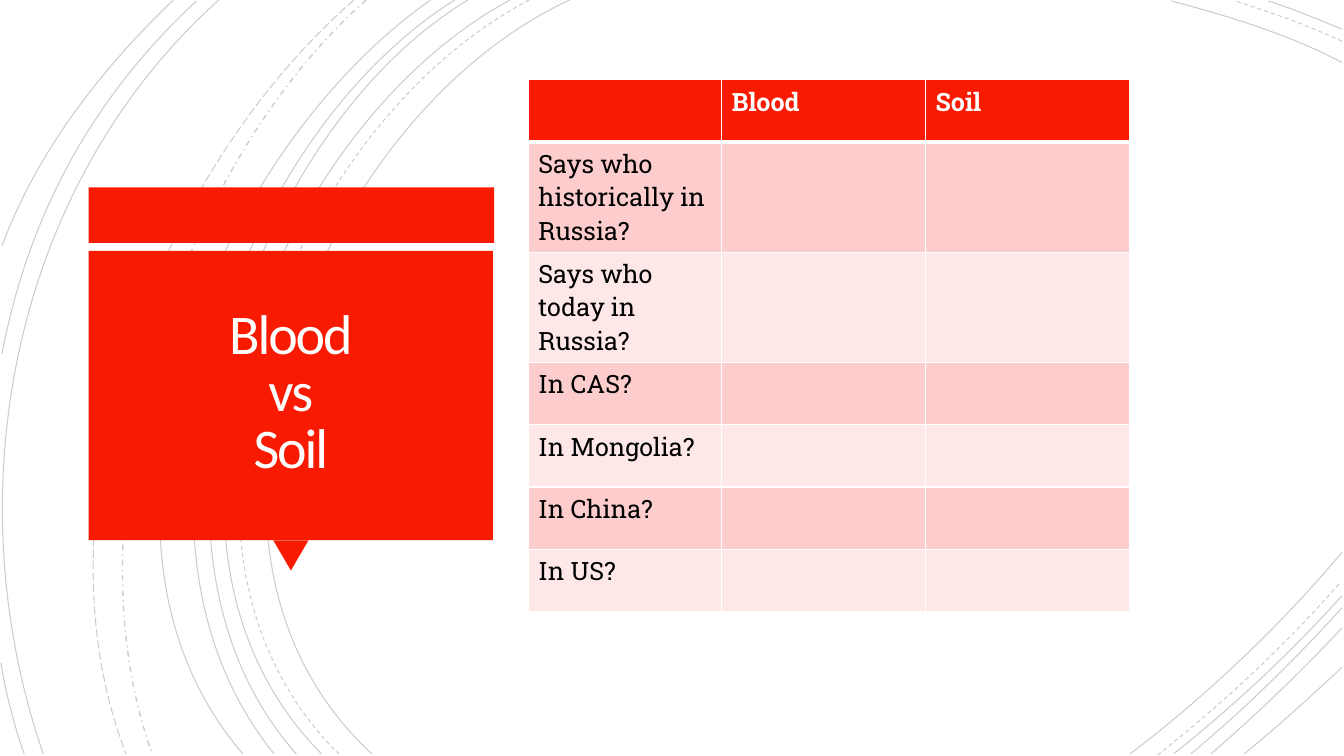
from copy import deepcopy

from lxml.etree import SubElement
from pptx import Presentation
from pptx.dml.color import RGBColor
from pptx.enum.dml import MSO_LINE_DASH_STYLE as Dash
from pptx.enum.shapes import MSO_SHAPE as Shape
from pptx.enum.text import MSO_ANCHOR as Anchor, MSO_AUTO_SIZE as AutoSize, PP_ALIGN as Align
from pptx.oxml.ns import qn
from pptx.util import Inches, Pt

RED = RGBColor(0xF8, 0x1B, 0x02)
DARK_BAND = RGBColor(0xFC, 0xCD, 0xCC)
LIGHT_BAND = RGBColor(0xFE, 0xE8, 0xE7)
BLACK = RGBColor(0, 0, 0)
WHITE = RGBColor(0xFF, 0xFF, 0xFF)
TITLE_WHITE = RGBColor(0xFF, 0xFE, 0xFF)

# Each arc: start, two control points, end
SOLID_ARCS = [
    [(5.65, 0), (3.15, 1.15), (1.43, 5.4), (3.69, 7.48)],
    [(13.31, 0.62), (12.78, 0.34), (12.18, 0.16), (11.62, 0.01)],
    [(11.21, 7.48), (11.97, 6.9), (12.69, 6.22), (13.31, 5.48)],
    [(5.06, 0), (2.7, 1.27), (1.1, 5.37), (3.19, 7.48)],
    [(13.31, 0.29), (13.07, 0.19), (12.83, 0.09), (12.58, 0.01)],
    [(11.64, 7.48), (12.23, 7.01), (12.8, 6.48), (13.31, 5.91)],
    [(4.64, 0), (2.44, 1.33), (1.1, 5.41), (2.94, 7.48)],
    [(11.81, 7.48), (12.34, 7.04), (12.84, 6.55), (13.31, 6.03)],
    [(4.51, 0), (2.31, 1.38), (0.97, 5.33), (2.72, 7.48)],
    [(12.01, 7.48), (12.46, 7.09), (12.9, 6.67), (13.31, 6.23)],
    [(4.27, 0), (2.17, 1.47), (0.53, 5.29), (2.41, 7.48)],
    [(12.34, 7.48), (12.67, 7.21), (12.99, 6.92), (13.31, 6.62)],
    [(2.17, 0), (0.11, 1.85), (-0.46, 4.9), (0.43, 7.48)],
    [(1.95, 0.01), (0.92, 0.96), (0.28, 2.14), (0.02, 3.51)],
    [(0.01, 6.58), (0.06, 6.89), (0.14, 7.19), (0.24, 7.48)],
    [(1.72, 0), (1, 0.69), (0.37, 1.5), (0.02, 2.44)],
]
DASHED_ARCS = [
    [(5.25, 0), (2.85, 1.25), (1.23, 5.37), (3.36, 7.48)],
    [(13.31, 0.41), (12.97, 0.25), (12.6, 0.12), (12.25, 0.01)],
    [(11.48, 7.49), (12.13, 6.98), (12.75, 6.4), (13.3, 5.77)],
]
DASH_DOT_ARCS = [[(3.63, 0), (1.76, 1.66), (0.65, 5.09), (1.51, 7.48)]]
LONG_DASH_ARCS = [[(3.51, 0), (1.57, 1.69), (0.29, 4.99), (1.25, 7.48)]]
ARC_GROUPS = [
    (SOLID_ARCS, Dash.SOLID, 0.75),
    (DASHED_ARCS, Dash.DASH, 0.75),
    (DASH_DOT_ARCS, Dash.DASH_DOT, 1),
    (LONG_DASH_ARCS, Dash.LONG_DASH, 0.75),
]

ROWS = [
    ("", "Blood", "Soil"),
    ("Says who historically in Russia?", "", ""),
    ("Says who today in Russia?", "", ""),
    ("In CAS?", "", ""),
    ("In Mongolia?", "", ""),
    ("In China?", "", ""),
    ("In US?", "", ""),
]
COLUMN_WIDTHS = [1.92, 2.02, 2.02]
ROW_HEIGHT = 0.62


def set_font(font, color, **values):
    font.color.rgb = color
    for name, value in values.items():
        setattr(font, name, value)


def add_arc(shapes, points, dash, width):
    start, *others = [(Inches(x), Inches(y)) for x, y in points]
    builder = shapes.build_freeform(*start)
    builder.add_line_segments(others, close=False)
    arc = builder.convert_to_shape()
    arc.shadow.inherit = False
    arc.fill.background()
    arc.line.color.rgb = BLACK
    arc.line.width = Pt(width)
    arc.line.dash_style = dash
    line_color = arc.element.find(".//" + qn("a:ln")).find(".//" + qn("a:srgbClr"))
    SubElement(line_color, qn("a:alpha"), val="20000")
    # Turn the three segments into one Bezier curve
    outline = arc.element.find(".//" + qn("a:path"))
    curve = SubElement(outline, qn("a:cubicBezTo"))
    for segment in outline.findall(qn("a:lnTo")):
        curve.append(segment[0])
        outline.remove(segment)


prs = Presentation()
prs.slide_width, prs.slide_height = Inches(13.33), Inches(7.5)
slide = prs.slides.add_slide(prs.slide_layouts[5])

# Background arcs
for arcs, dash, width in ARC_GROUPS:
    for points in arcs:
        add_arc(slide.shapes, points, dash, width)

# Red title panel: bar, pointer, main block
for kind, box, rotation in [
    (Shape.RECTANGLE, (0.88, 1.86, 4.02, 0.55), 0),
    (Shape.ISOSCELES_TRIANGLE, (2.71, 5.36, 0.35, 0.3), 180),
    (Shape.RECTANGLE, (0.88, 2.49, 4.01, 2.87), 0),
]:
    panel = slide.shapes.add_shape(kind, *map(Inches, box))
    panel.rotation = rotation
    panel.shadow.inherit = False
    panel.fill.solid()
    panel.fill.fore_color.rgb = RED
    panel.line.fill.background()

# Title, in front of the panel
title = slide.shapes.title
panel.element.addnext(title.element)
title.left, title.top, title.width, title.height = map(Inches, (0.97, 2.57, 3.83, 2.69))
heading = title.text_frame
heading.text = "Blood\vvs\vSoil"
frame_format = {"vertical_anchor": Anchor.MIDDLE, "word_wrap": True, "auto_size": AutoSize.NONE}
frame_format.update({f"margin_{side}": Inches(0.25) for side in ("left", "right", "top", "bottom")})
for name, value in frame_format.items():
    setattr(heading, name, value)
lines = heading.paragraphs[0]
lines.alignment = Align.CENTER
lines.line_spacing = 0.85
for run in lines.runs:
    set_font(run.font, TITLE_WHITE, name="Calibri", size=Pt(40))
    run.font._element.set("spc", "-150")
for line_break in lines._p.findall(qn("a:br")):
    line_break.append(deepcopy(run.font._element))

# Comparison table
frame = slide.shapes.add_table(
    len(ROWS), len(COLUMN_WIDTHS), Inches(5.24), Inches(0.79),
    Inches(sum(COLUMN_WIDTHS)), Inches(ROW_HEIGHT * len(ROWS)))
comparison = frame.table
for column, width in zip(comparison.columns, COLUMN_WIDTHS):
    column.width = Inches(width)
for r, row in enumerate(ROWS):
    header = r == 0
    band = RED if header else DARK_BAND if r % 2 else LIGHT_BAND
    for c, wording in enumerate(row):
        cell = comparison.cell(r, c)
        cell.fill.solid()
        cell.fill.fore_color.rgb = band
        if wording:
            cell.text = wording
            set_font(cell.text_frame.paragraphs[0].runs[0].font, WHITE if header else BLACK,
                     name="Roboto Slab", size=Pt(18), bold=header)
        # White borders, with a thick rule under the header
        edges = {"a:lnL": 1, "a:lnR": 1, "a:lnT": 3 if r == 1 else 1, "a:lnB": 3 if header else 1}
        properties = cell._tc.get_or_add_tcPr()
        for position, (edge, weight) in enumerate(edges.items()):
            border = SubElement(properties, qn(edge), w=str(Pt(weight)))
            SubElement(SubElement(border, qn("a:solidFill")), qn("a:srgbClr"), val=str(WHITE))
            properties.insert(position, border)

prs.save("out.pptx")
